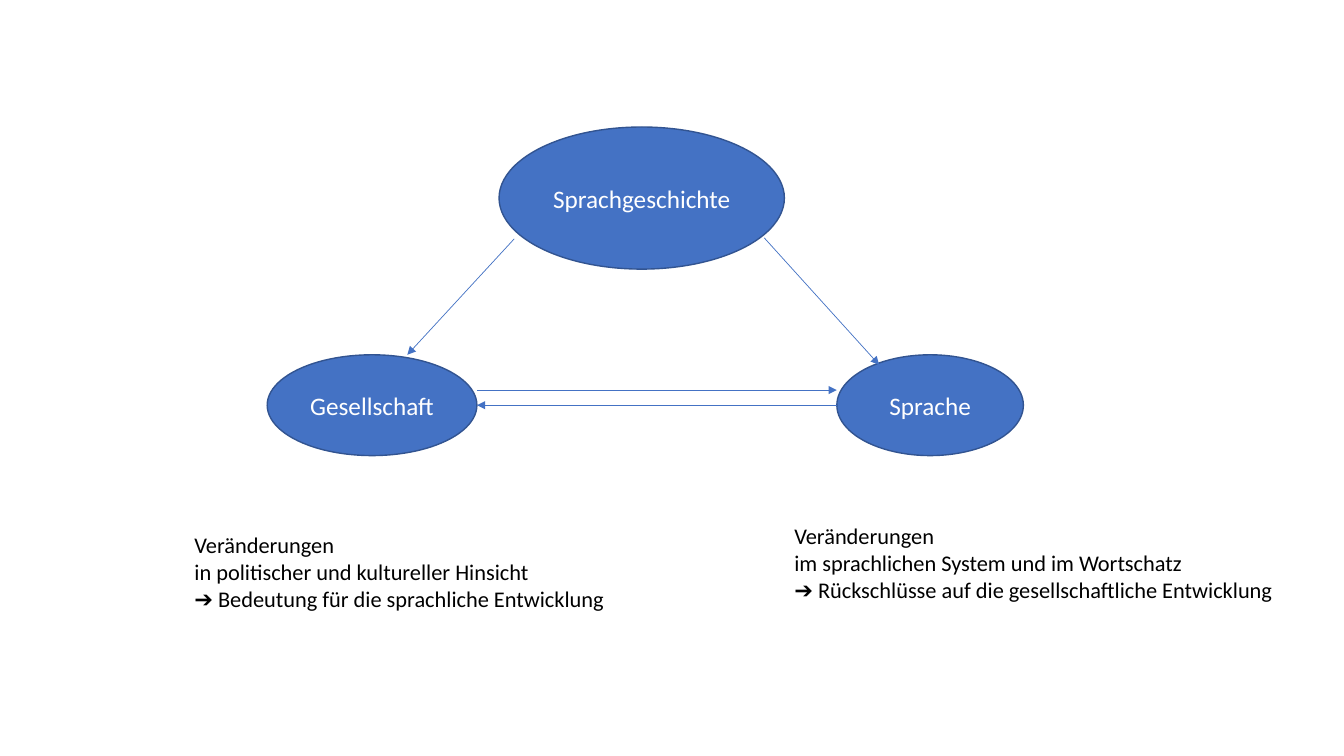
from lxml.etree import SubElement
from pptx import Presentation
from pptx.dml.color import RGBColor
from pptx.enum.shapes import MSO_CONNECTOR, MSO_SHAPE
from pptx.enum.text import MSO_ANCHOR, MSO_AUTO_SIZE, PP_ALIGN
from pptx.oxml.ns import qn
from pptx.util import Inches, Pt

BLUE, DARK_BLUE, WHITE, BLACK = "4472C4", "325491", "FFFFFF", "000000"

TOPICS = [
    ("Sprachgeschichte", (4.95, 1.26, 2.83, 1.41)),
    ("Gesellschaft", (2.65, 3.52, 2.08, 1)),
    ("Sprache", (8.3, 3.52, 1.85, 1)),
]
NOTES = [
    (["Veränderungen",
      "in politischer und kultureller Hinsicht",
      "➔ Bedeutung für die sprachliche Entwicklung"], (1.83, 5.22, 4.41, 0.91)),
    (["Veränderungen",
      "im sprachlichen System und im Wortschatz",
      "➔ Rückschlüsse auf die gesellschaftliche Entwicklung"], (7.78, 5.13, 5.05, 0.91)),
]
ARROWS = [
    ((5.1, 2.37), (4.04, 3.52)),
    ((7.58, 2.36), (8.72, 3.62)),
    ((4.73, 3.87), (8.3, 3.87)),
    ((8.3, 4.02), (4.73, 4.02)),
]


def color(value):
    return RGBColor.from_string(value)


def write(text_frame, lines, size, text_color, align=PP_ALIGN.LEFT,
          anchor=MSO_ANCHOR.TOP, wrap=True):
    text_frame.word_wrap = wrap
    text_frame.vertical_anchor = anchor
    for index, line in enumerate(lines):
        paragraph = text_frame.add_paragraph() if index else text_frame.paragraphs[0]
        paragraph.alignment = align
        run = paragraph.add_run()
        run.text = line
        run.font.name = "Calibri"
        run.font.size = Pt(size)
        run.font.color.rgb = color(text_color)


def add_topic(slide, name, box):
    shape = slide.shapes.add_shape(MSO_SHAPE.OVAL, *map(Inches, box))
    shape.shadow.inherit = False
    shape.fill.solid()
    shape.fill.fore_color.rgb = color(BLUE)
    shape.line.color.rgb = color(DARK_BLUE)
    shape.line.width = Pt(1)
    write(shape.text_frame, [name], size=18, text_color=WHITE,
          align=PP_ALIGN.CENTER, anchor=MSO_ANCHOR.MIDDLE)


def add_note(slide, lines, box):
    shape = slide.shapes.add_textbox(*map(Inches, box))
    write(shape.text_frame, lines, size=16, text_color=BLACK, wrap=False)
    shape.text_frame.auto_size = MSO_AUTO_SIZE.SHAPE_TO_FIT_TEXT


def add_arrow(slide, start, end):
    connector = slide.shapes.add_connector(
        MSO_CONNECTOR.STRAIGHT, *map(Inches, start + end))
    connector.line.color.rgb = color(BLUE)
    connector.line.width = Pt(0.5)
    properties = connector._element.spPr
    SubElement(properties.find(qn("a:ln")), qn("a:tailEnd"), type="triangle")
    SubElement(properties, qn("a:effectLst"))


def main():
    presentation = Presentation()
    presentation.slide_width = Inches(13.33)
    presentation.slide_height = Inches(7.5)
    slide = presentation.slides.add_slide(presentation.slide_layouts[6])
    for name, box in TOPICS:
        add_topic(slide, name, box)
    for lines, box in NOTES:
        add_note(slide, lines, box)
    for start, end in ARROWS:
        add_arrow(slide, start, end)
    presentation.save("out.pptx")


if __name__ == "__main__":
    main()
